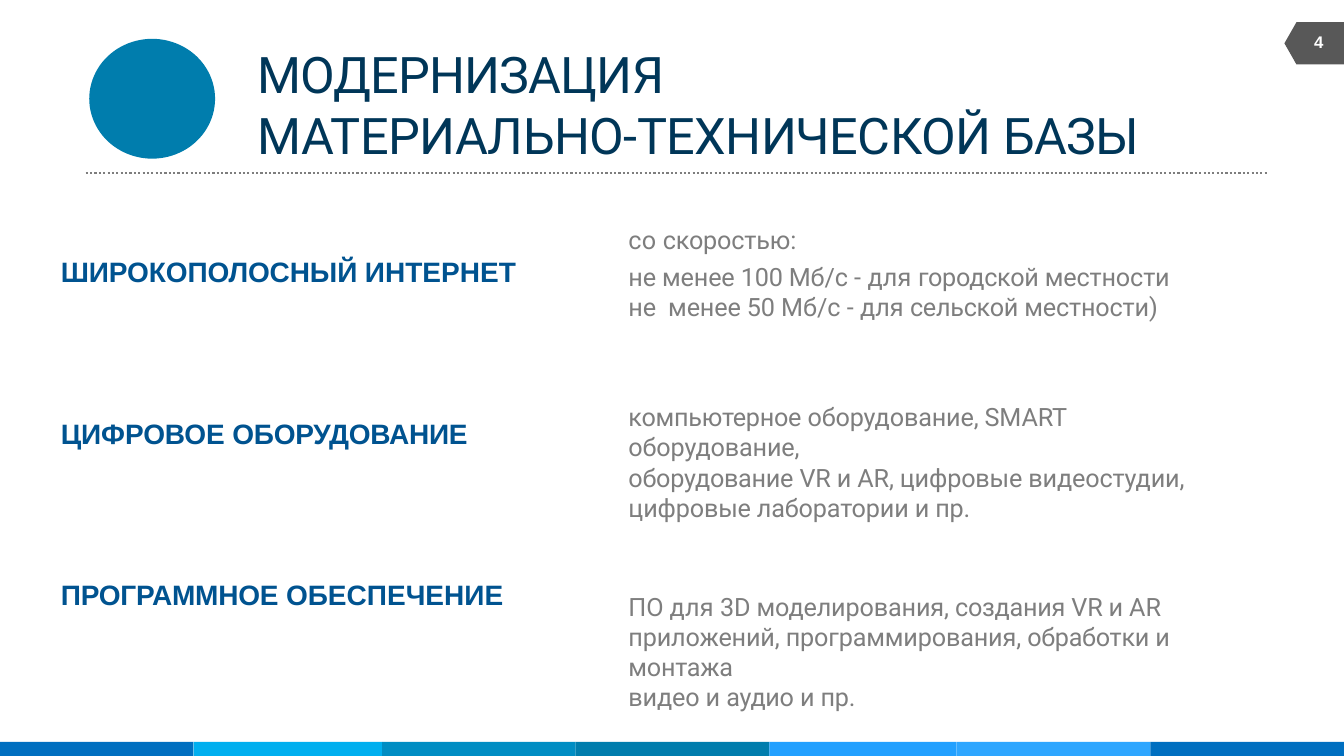
from itertools import pairwise

from pptx import Presentation
from pptx import util as u
from pptx.dml.color import RGBColor
from pptx.enum import dml, shapes, text
from pptx.oxml.ns import qn

WHITE = RGBColor(0xFF, 0xFF, 0xFF)
NAVY = RGBColor(0x00, 0x36, 0x58)
HEADING = RGBColor(0x00, 0x53, 0x90)
GREY = RGBColor(0x7E, 0x7E, 0x7E)
DARK = RGBColor(0x58, 0x58, 0x58)
BLUE = RGBColor(0x00, 0x6F, 0xC0)
SKY = RGBColor(0x00, 0xAF, 0xEF)
CYAN = RGBColor(0x00, 0x8D, 0xC3)
TEAL = RGBColor(0x00, 0x7D, 0xAD)
AZURE = RGBColor(0x22, 0xA0, 0xFF)
LIGHT = RGBColor(0x2E, 0xA6, 0xFF)

STRIP_EDGES = (0, 14.4, 28.43, 42.84, 57.24, 71.19, 85.6, 100)
STRIP_COLORS = (BLUE, SKY, CYAN, TEAL, AZURE, LIGHT, BLUE)

TITLE = [
    (1, [("МОДЕРНИЗАЦИЯ", -0.6)]),
    (0, [("МАТЕРИАЛЬНО-ТЕХНИЧЕСКОЙ ", -0.4), ("БАЗЫ", -0.6)]),
]
HEADINGS = [
    (34.2, [("ШИРОКОПОЛОСНЫЙ ", -0.1), ("ИНТЕРНЕТ", 0)]),
    (30.8, [("ЦИФРОВОЕ ", -0.1), ("ОБОРУДОВАНИЕ", -0.2)]),
    (33.3, [("ПРОГРАММНОЕ ", -0.2), ("ОБЕСПЕЧЕНИЕ", 0)]),
]
DETAILS = [
    (5.3, [("со ", 0.1), ("скоростью:", -0.1)]),
    (4.3, [("не менее 100 Мб/с ", -0.1), ("- для ", 0.1), ("городской ", -0.2),
           ("местности не  менее 50 ", -0.1), ("Мб/с - для ", 0), ("сельской ", -0.2),
           ("местности)", -0.1)]),
    (57, [("компьютерное ", -0.2), ("оборудование, SMART оборудование,", -0.1)]),
    (0, [("оборудование ", -0.2),
         ("VR и AR, цифровые видеостудии, цифровые лаборатории и пр.", -0.1)]),
    (49, [("ПО ", -0.1), ("для ", 0.1), ("3D моделирования, ", -0.1),
          ("создания ", -0.2), ("VR и AR", -0.1)]),
    (0, [("приложений, программирования, ", -0.1), ("обработки ", -0.2),
         ("и ", 0), ("монтажа", -0.2)]),
    (0, [("видео и ", -0.1), ("аудио ", -0.2), ("и пр.", -0.1)]),
]


class Slide:
    """Draws styled elements on one slide, placed in percent of its size."""

    def __init__(self, prs):
        self.w, self.h = prs.slide_width, prs.slide_height
        self.s = prs.slides.add_slide(prs.slide_layouts[6])

    def x(self, share):
        return round(self.w * share / 100)

    def y(self, share):
        return round(self.h * share / 100)

    def box(self, left, top, width, height):
        return self.x(left), self.y(top), self.x(width), self.y(height)

    def paint(self, sp, color):
        sp.shadow.inherit = False
        sp.fill.solid()
        sp.fill.fore_color.rgb = color
        sp.line.fill.background()
        return sp

    def shape(self, kind, place, color):
        return self.paint(self.s.shapes.add_shape(kind, *self.box(*place)), color)

    def polygon(self, points, color):
        start, *rest = [(self.x(a), self.y(b)) for a, b in points]
        fb = self.s.shapes.build_freeform(*start)
        fb.add_line_segments(rest, close=True)
        return self.paint(fb.convert_to_shape(), color)

    def rule(self, left, right, top, color, width):
        cn = self.s.shapes.add_connector(
            shapes.MSO_CONNECTOR.STRAIGHT,
            self.x(left), self.y(top), self.x(right), self.y(top))
        cn.line.color.rgb = color
        cn.line.width = u.Pt(width)
        cn.line.dash_style = dml.MSO_LINE.ROUND_DOT
        props = cn._element.spPr
        props.append(props.makeelement(qn("a:effectLst"), {}))

    def text(self, place, paragraphs, font, size, color, bold=False, inset=0.01, right=0):
        tf = self.s.shapes.add_textbox(*self.box(*place)).text_frame
        tf.word_wrap = True
        tf.vertical_anchor = text.MSO_ANCHOR.TOP
        tf.margin_left = tf.margin_right = tf.margin_bottom = 0
        tf.margin_top = u.Inches(inset)
        for i, (gap, runs) in enumerate(paragraphs):
            p = tf.add_paragraph() if i else tf.paragraphs[0]
            p.space_before = u.Pt(gap)
            props = p._p.get_or_add_pPr()
            props.set("marL", str(u.Pt(1)))
            props.set("marR", str(self.x(right)))
            for words, spacing in runs:
                r = p.add_run()
                r.text = words
                r.font.name, r.font.size, r.font.bold = font, u.Pt(size), bold
                r.font.color.rgb = color
                r._r.get_or_add_rPr().set("spc", str(round(spacing * 100)))


def main():
    prs = Presentation()
    prs.slide_width, prs.slide_height = u.Inches(13.33), u.Inches(7.5)
    s = Slide(prs)

    for (left, right), color in zip(pairwise(STRIP_EDGES), STRIP_COLORS):
        s.shape(shapes.MSO_SHAPE.RECTANGLE, (left, 98.13, right - left, 1.87), color)

    s.polygon([(100, 2.93), (96.47, 2.93), (95.57, 5.73), (96.47, 8.53), (100, 8.53)], DARK)
    s.text((97.67, 4, 0.9, 3.07), [(1, [("4", -0.1)])], "Arial", 12, WHITE, bold=True)

    s.text((19.05, 5.6, 69.54, 16.4), TITLE, "Roboto", 36, NAVY)
    s.rule(6.38, 94.37, 22.93, GREY, 1.56)
    circle = s.shape(shapes.MSO_SHAPE.OVAL, (6.75, 5.33, 9.15, 15.47), TEAL)
    circle.line.color.rgb = TEAL
    circle.line.width = u.Pt(2.04)

    for row, (width, runs) in enumerate(HEADINGS):
        s.text((4.43, 33.6 + 21.33 * row, width, 4.8), [(1, runs)],
               "Arial", 20, HEADING, bold=True)
    s.text((46.66, 28.8, 48.24, 56.53), DETAILS, "Roboto", 18, GREY, inset=0.07, right=5.85)

    prs.save("out.pptx")


if __name__ == "__main__":
    main()
